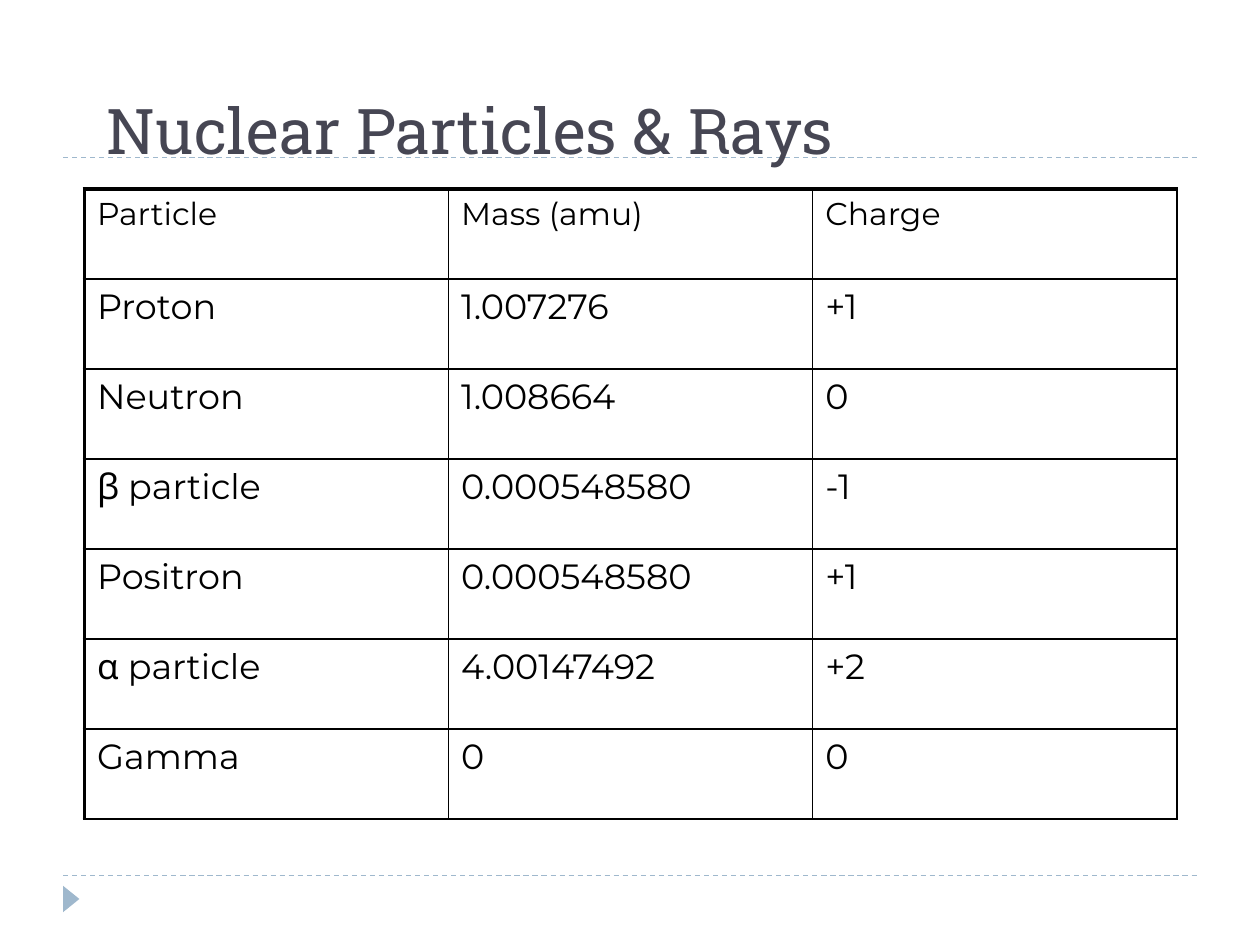
"""Builds the slide that tables the mass and charge of nuclear particles and rays."""
from dataclasses import dataclass

from lxml.etree import SubElement
from pptx import Presentation
from pptx.dml.color import RGBColor
from pptx.enum.dml import MSO_LINE
from pptx.enum.shapes import MSO_CONNECTOR, MSO_SHAPE
from pptx.enum.text import MSO_ANCHOR
from pptx.oxml.ns import qn
from pptx.slide import Slide
from pptx.table import _Cell
from pptx.util import Inches, Pt


@dataclass(frozen=True)
class Theme:
    title_font: str = "Roboto Slab"
    body_font: str = "Montserrat"
    title_color: str = "464653"
    accent: str = "9FB8CD"
    ink: str = "000000"
    title_size: float = 36
    header_size: float = 18
    body_size: float = 20
    rule_width: float = 0.75
    thin_border: float = 1
    thick_border: float = 2.25


@dataclass(frozen=True)
class Particle:
    name: str
    mass: str
    charge: str


THEME = Theme()
HEADINGS = ("Particle", "Mass (amu)", "Charge")
PARTICLES = (
    Particle("Proton", "1.007276", "+1"),
    Particle("Neutron", "1.008664", "0"),
    Particle("β particle", "0.000548580", "-1"),
    Particle("Positron", "0.000548580", "+1"),
    Particle("α particle", "4.00147492", "+2"),
    Particle("Gamma", "0", "0"),
)
RULE_HEIGHTS = (6.95, 1.25)


def color(value: str) -> RGBColor:
    return RGBColor.from_string(value)


def draw_rule(slide: Slide, y: float) -> None:
    rule = slide.shapes.add_connector(
        MSO_CONNECTOR.STRAIGHT, Inches(0.5), Inches(y), Inches(9.5), Inches(y)
    )
    rule.line.color.rgb = color(THEME.accent)
    rule.line.width = Pt(THEME.rule_width)
    rule.line.dash_style = MSO_LINE.DASH
    SubElement(rule._element.spPr, qn("a:effectLst"))


def draw_marker(slide: Slide) -> None:
    marker = slide.shapes.add_shape(
        MSO_SHAPE.ISOSCELES_TRIANGLE, Inches(0.46), Inches(7.07), Inches(0.21), Inches(0.13)
    )
    marker.rotation = 90
    marker.shadow.inherit = False
    marker.fill.solid()
    marker.fill.fore_color.rgb = color(THEME.accent)
    marker.line.fill.background()


def draw_title(slide: Slide, wording: str) -> None:
    title = slide.shapes.add_textbox(Inches(0.75), Inches(0.33), Inches(8.5), Inches(1.6))
    frame = title.text_frame
    frame.word_wrap = True
    frame.vertical_anchor = MSO_ANCHOR.BOTTOM
    frame.margin_bottom = Inches(0.6)
    heading = frame.paragraphs[0]
    heading.text = wording
    heading.font.name = THEME.title_font
    heading.font.size = Pt(THEME.title_size)
    heading.font.color.rgb = color(THEME.title_color)


def set_border(cell: _Cell, side: str, width: float) -> None:
    border = SubElement(cell._tc.get_or_add_tcPr(), qn(f"a:ln{side}"), w=str(Pt(width)))
    SubElement(SubElement(border, qn("a:solidFill")), qn("a:srgbClr"), val=THEME.ink)


def fill_cell(cell: _Cell, wording: str, size: float, thick_sides: str) -> None:
    for side in "LRTB":
        set_border(cell, side, THEME.thick_border if side in thick_sides else THEME.thin_border)
    cell.fill.background()
    entry = cell.text_frame.paragraphs[0]
    entry.text = wording
    entry.font.name = THEME.body_font
    entry.font.size = Pt(size)
    entry.font.bold = False
    entry.font.color.rgb = color(THEME.ink)


def draw_particles(slide: Slide) -> None:
    rows = [HEADINGS] + [(p.name, p.mass, p.charge) for p in PARTICLES]
    table = slide.shapes.add_table(
        len(rows), len(HEADINGS), Inches(0.67), Inches(1.5), Inches(8.67), Inches(5)
    ).table
    table.first_row = False
    table.horz_banding = False
    for r, row in enumerate(rows):
        size = THEME.body_size if r else THEME.header_size
        for c, wording in enumerate(row):
            thick_sides = ("" if c else "L") + ("" if r else "T")
            fill_cell(table.cell(r, c), wording, size, thick_sides)


def main() -> None:
    deck = Presentation()
    deck.slide_width, deck.slide_height = Inches(10), Inches(7.5)
    slide = deck.slides.add_slide(deck.slide_layouts[6])
    for y in RULE_HEIGHTS:
        draw_rule(slide, y)
    draw_marker(slide)
    draw_title(slide, "Nuclear Particles & Rays")
    draw_particles(slide)
    deck.save("out.pptx")


if __name__ == "__main__":
    main()
